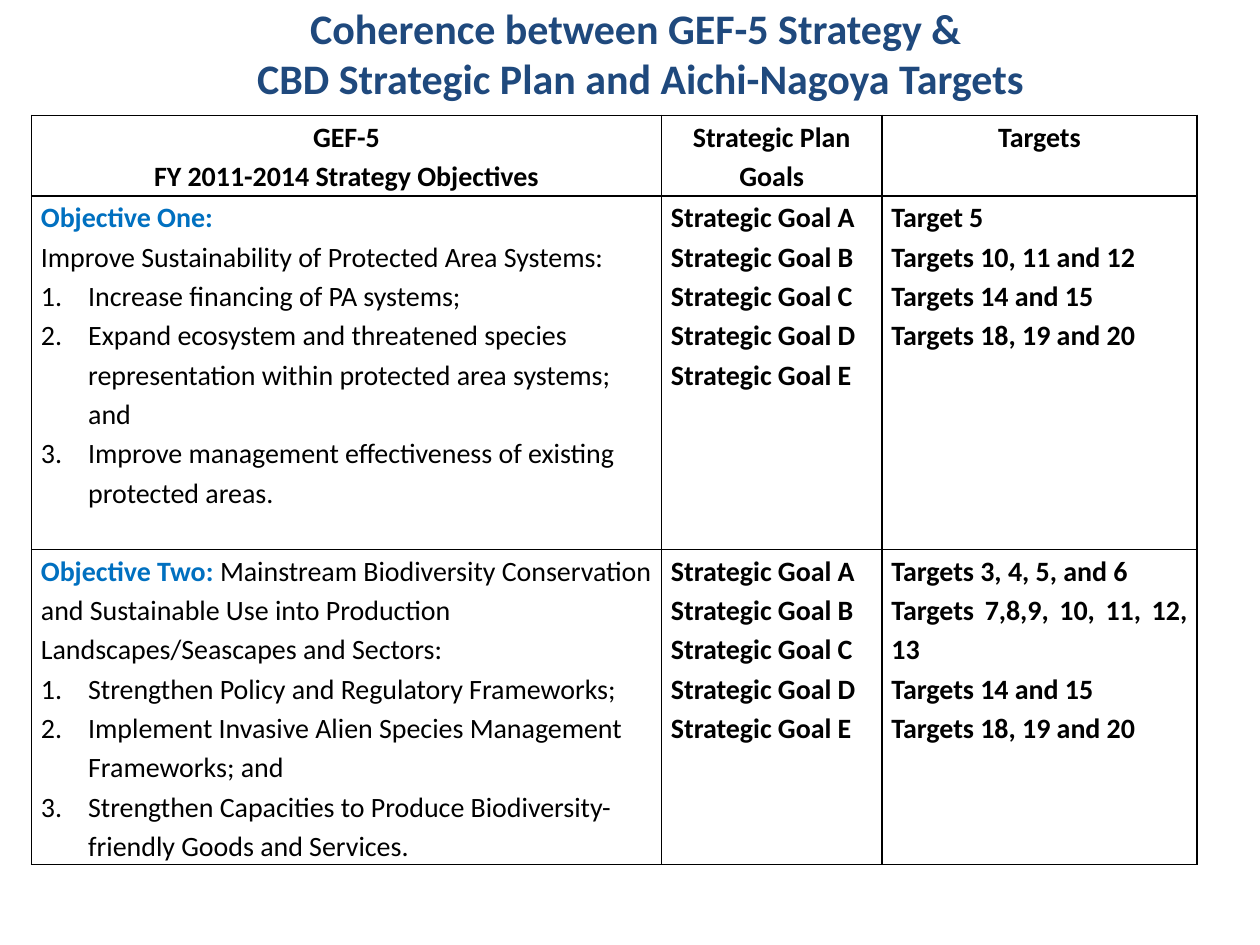
"""Build a slide comparing GEF-5 objectives with CBD goals and targets."""
from lxml import etree
from pptx import Presentation
from pptx.dml.color import RGBColor
from pptx.enum.text import MSO_ANCHOR, PP_ALIGN
from pptx.oxml.ns import qn
from pptx.util import Pt

CENTER, JUSTIFY, LEFT = PP_ALIGN.CENTER, PP_ALIGN.JUSTIFY, PP_ALIGN.LEFT
MIDDLE = MSO_ANCHOR.MIDDLE
COLORS = {"title": "1F497D", "text": "000000", "objective": "0070C0"}


def style(font, size, color, bold):
    font.name = "Calibri"
    font.size = Pt(size)
    font.bold = bold
    font.color.rgb = RGBColor.from_string(COLORS[color])


def add_border(cell, side):
    line = etree.SubElement(cell._tc.get_or_add_tcPr(), qn(f"a:{side}"), w=str(Pt(1)))
    fill = etree.SubElement(line, qn("a:solidFill"))
    etree.SubElement(fill, qn("a:srgbClr"), val=COLORS["text"])


goals = [("goal", f"Strategic Goal {letter}") for letter in "ABCDE"]
rows = [
    [
        [("head", "GEF-5"), ("head", "FY 2011-2014 Strategy Objectives")],
        [("head", "Strategic Plan Goals")],
        [("head", "Targets")],
    ],
    [
        [
            ("objective", "Objective One: "),
            ("intro", "Improve Sustainability of Protected Area Systems: "),
            ("step", "Increase financing of PA systems;"),
            ("step", "Expand ecosystem and threatened species representation "
                     "within protected area systems; and"),
            ("step", "Improve management effectiveness of existing protected areas."),
        ],
        goals,
        [
            ("goal", "Target 5"),
            ("goal", "Targets 10, 11 and 12"),
            ("goal", "Targets 14 and 15"),
            ("goal", "Targets 18, 19 and 20"),
        ],
    ],
    [
        [
            ("lead", "Objective Two: |Mainstream Biodiversity Conservation and "
                     "Sustainable Use into Production Landscapes/Seascapes and Sectors:"),
            ("step", "Strengthen Policy and Regulatory Frameworks;"),
            ("step", "Implement Invasive Alien Species Management Frameworks; and"),
            ("step", "Strengthen Capacities to Produce Biodiversity-friendly "
                     "Goods and Services."),
        ],
        goals,
        [
            ("goal", "Targets 3, 4, 5, and 6"),
            ("goal", "Targets 7,8,9, 10, 11, 12, 13"),
            ("goal", "Targets 14 and 15"),
            ("goal", "Targets 18, 19 and 20"),
        ],
    ],
]
kinds = {
    "head": (CENTER, "text", True),
    "objective": (JUSTIFY, "objective", True),
    "intro": (JUSTIFY, "text", False),
    "lead": (LEFT, "text", False),
    "step": (LEFT, "text", False),
    "goal": (JUSTIFY, "text", True),
}

prs = Presentation()
prs.slide_width, prs.slide_height = Pt(720), Pt(540)
slide = prs.slides.add_slide(prs.slide_layouts[6])

title = slide.shapes.add_textbox(Pt(30), Pt(0), Pt(672), Pt(60)).text_frame
title.word_wrap = True
title.vertical_anchor = MIDDLE
heading = title.paragraphs[0]
heading.text = "Coherence between GEF-5 Strategy & \vCBD Strategic Plan and Aichi-Nagoya Targets"
heading.alignment = CENTER
style(heading.font, 24, "title", True)

coherence = slide.shapes.add_table(3, 3, Pt(18), Pt(66), Pt(666), Pt(428)).table
coherence.first_row = False
coherence.horz_banding = False
for column, width in zip(coherence.columns, (360, 126, 180)):
    column.width = Pt(width)
for row, height in zip(coherence.rows, (46, 202, 180)):
    row.height = Pt(height)

for row, contents in zip(coherence.rows, rows):
    for cell, entries in zip(row.cells, contents):
        cell.margin_left = cell.margin_right = Pt(5.4)
        cell.margin_top = cell.margin_bottom = Pt(0)
        for side in ("lnL", "lnR", "lnT", "lnB"):
            add_border(cell, side)
        cell.fill.background()
        for index, (kind, text) in enumerate(entries):
            frame = cell.text_frame
            entry = frame.add_paragraph() if index else frame.paragraphs[0]
            alignment, color, bold = kinds[kind]
            entry.alignment = alignment
            entry.line_spacing = 1.15
            if kind == "step":
                props = entry._p.get_or_add_pPr()
                props.set("marL", str(Pt(27)))
                props.set("indent", str(Pt(-27)))
                etree.SubElement(props, qn("a:buFont"), typeface="+mj-lt")
                etree.SubElement(props, qn("a:buAutoNum"), type="arabicPeriod")
            style(entry.font, 16, color, bold)
            for part in text.split("|"):
                entry.add_run().text = part
            if kind == "lead":
                style(entry.runs[0].font, 16, "objective", True)

prs.save("out.pptx")
